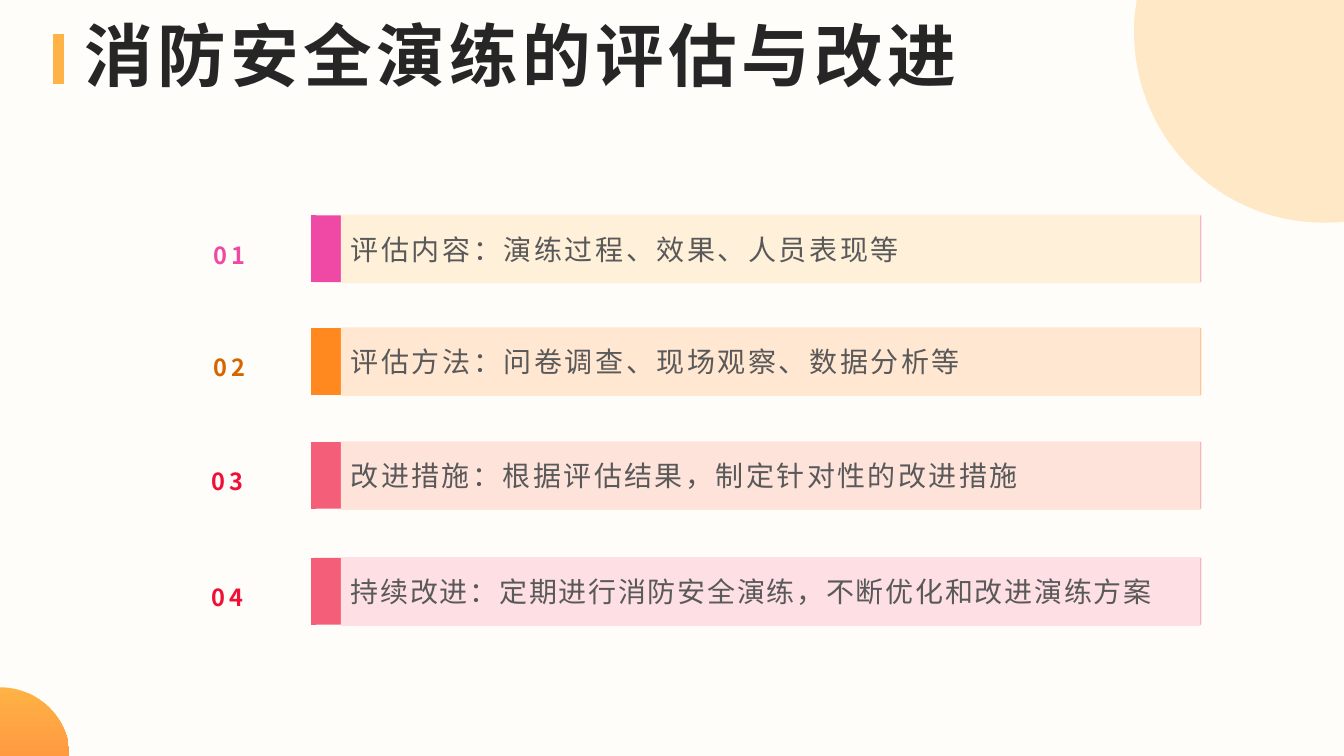
import pptx
import pptx.util
import pptx.dml.color
import pptx.enum.shapes
import pptx.enum.text
import pptx.oxml.ns
import lxml.etree

Cm = pptx.util.Cm
Pt = pptx.util.Pt
Rgb = pptx.dml.color.RGBColor.from_string
Kind = pptx.enum.shapes.MSO_SHAPE
Align = pptx.enum.text.PP_ALIGN
Anchor = pptx.enum.text.MSO_ANCHOR
qn = pptx.oxml.ns.qn

theme = {
    "font": "Noto Sans CJK SC",
    "back": "FFFDF9",
    "gold": "FFB245",
    "amber": "FF9A41",
    "title": "262626",
    "body": "595959",
    "title_size": 49,
    "num_size": 16.8,
    "body_size": 20,
}


def write(shape, text, size, color, gap, bold=False):
    frame = shape.text_frame
    frame.word_wrap = True
    frame.text = text
    para = frame.paragraphs[0]
    run = para.runs[0]
    run.font.size = Pt(size)
    run.font.bold = bold
    run.font.name = theme["font"]
    run.font.color.rgb = Rgb(color)
    props = run._r.get_or_add_rPr()
    props.set("spc", str(round(gap * 100)))
    face = lxml.etree.SubElement(props, qn("a:ea"))
    face.set("typeface", theme["font"])
    return frame, para


def rule(x, top, end, color, width):
    line = slide.shapes.add_connector(
        pptx.enum.shapes.MSO_CONNECTOR.STRAIGHT, Cm(x), Cm(top), Cm(x), Cm(end))
    line.line.color.rgb = Rgb(color)
    line.line.width = Pt(width)
    lxml.etree.SubElement(line._element.spPr, qn("a:effectLst"))


deck = pptx.Presentation()
wide, high = 33.87, 19.05
deck.slide_width = Cm(wide)
deck.slide_height = Cm(high)
slide = deck.slides.add_slide(deck.slide_layouts[6])
slide.background.fill.solid()
slide.background.fill.fore_color.rgb = Rgb(theme["back"])

sun = [
    [(28.65, 0)],
    [(wide, 0)],
    [(wide, 5.59)],
    [(33.7, 5.61), (33.52, 5.61), (33.35, 5.61)],
    [(30.71, 5.61), (28.58, 3.45), (28.58, 0.81)],
    [(28.58, 0.66), (28.58, 0.48), (28.6, 0.33)],
]
hill = [
    [(0, 17.32)],
    [(0.86, 17.32), (1.57, 17.93), (1.73, 18.75)],
    [(1.75, high)],
    [(0, high)],
]
forms = []
for parts in (sun, hill):
    spots = [(Cm(x), Cm(y)) for part in parts for x, y in part]
    pen = slide.shapes.build_freeform(*spots[0])
    pen.add_line_segments(spots[1:], close=True)
    form = pen.convert_to_shape()
    form.shadow.inherit = False
    form.line.fill.background()
    lines = iter(form._element.findall(".//" + qn("a:lnTo")))
    for part in parts[1:]:
        first = next(lines)
        if len(part) == 3:
            first.tag_name = None
            curve = lxml.etree.Element(qn("a:cubicBezTo"))
            first.addprevious(curve)
            for line in (first, next(lines), next(lines)):
                curve.append(line[0])
                line.getparent().remove(line)
    forms.append(form)

disc, mound = forms
disc.fill.solid()
disc.fill.fore_color.rgb = Rgb(theme["gold"])
tint = disc._element.spPr.find(".//" + qn("a:srgbClr"))
lxml.etree.SubElement(tint, qn("a:alpha")).set("val", "28000")
mound.fill.gradient()
mound.fill.gradient_angle = 270
for place, color in enumerate(("gold", "amber")):
    stop = mound.fill.gradient_stops[place]
    stop.color.rgb = Rgb(theme[color])
    stop.position = place

title = slide.shapes.add_textbox(Cm(2.12), Cm(0.43), Cm(30.48), Cm(2.11))
frame, para = write(title, "消防安全演练的评估与改进",
                    theme["title_size"], theme["title"], 3.3, True)
frame.margin_left = frame.margin_right = 0
frame.margin_top = frame.margin_bottom = 0
frame.vertical_anchor = Anchor.MIDDLE
para.line_spacing = 0.9
rule(1.47, 0.85, 2.11, theme["gold"], 8)

rows = [
    (5.43, 3.66, "EF49A5", "EF49A5", "FFF0DA", 1.8,
     "评估内容：演练过程、效果、人员表现等"),
    (8.27, 3.66, "FF881F", "D66500", "FFE7D2", 1.8,
     "评估方法：问卷调查、现场观察、数据分析等"),
    (11.14, 3.62, "F55E79", "EF0F37", "FEE3DB", 1.7,
     "改进措施：根据评估结果，制定针对性的改进措施"),
    (14.06, 3.62, "F55E79", "EF0F37", "FDDFE4", 1.2,
     "持续改进：定期进行消防安全演练，不断优化和改进演练方案"),
]
for count, (top, left, strong, ink, pale, gap, text) in enumerate(rows, 1):
    label = slide.shapes.add_textbox(Cm(left), Cm(top + 0.28), Cm(4.24), Cm(1.19))
    frame, para = write(label, f"{count:02}", theme["num_size"], ink, 3, True)
    frame.vertical_anchor = Anchor.BOTTOM
    para.alignment = Align.CENTER
    para.line_spacing = 1.3

    for x, y, width, height, color in (
        (7.9, top, 22.37, 1.68, strong),
        (8.59, top - 0.02, 21.67, 1.73, pale),
    ):
        panel = slide.shapes.add_shape(
            Kind.RECTANGLE, Cm(x), Cm(y), Cm(width), Cm(height))
        panel.shadow.inherit = False
        panel.fill.solid()
        panel.fill.fore_color.rgb = Rgb(color)
        panel.line.fill.background()

    frame, para = write(panel, text, theme["body_size"], theme["body"], gap)
    frame.vertical_anchor = Anchor.MIDDLE
    para.alignment = Align.LEFT
    para.space_after = Pt(8)
    rule(7.9, top, top + 1.68, strong, 3)

deck.save("out.pptx")
